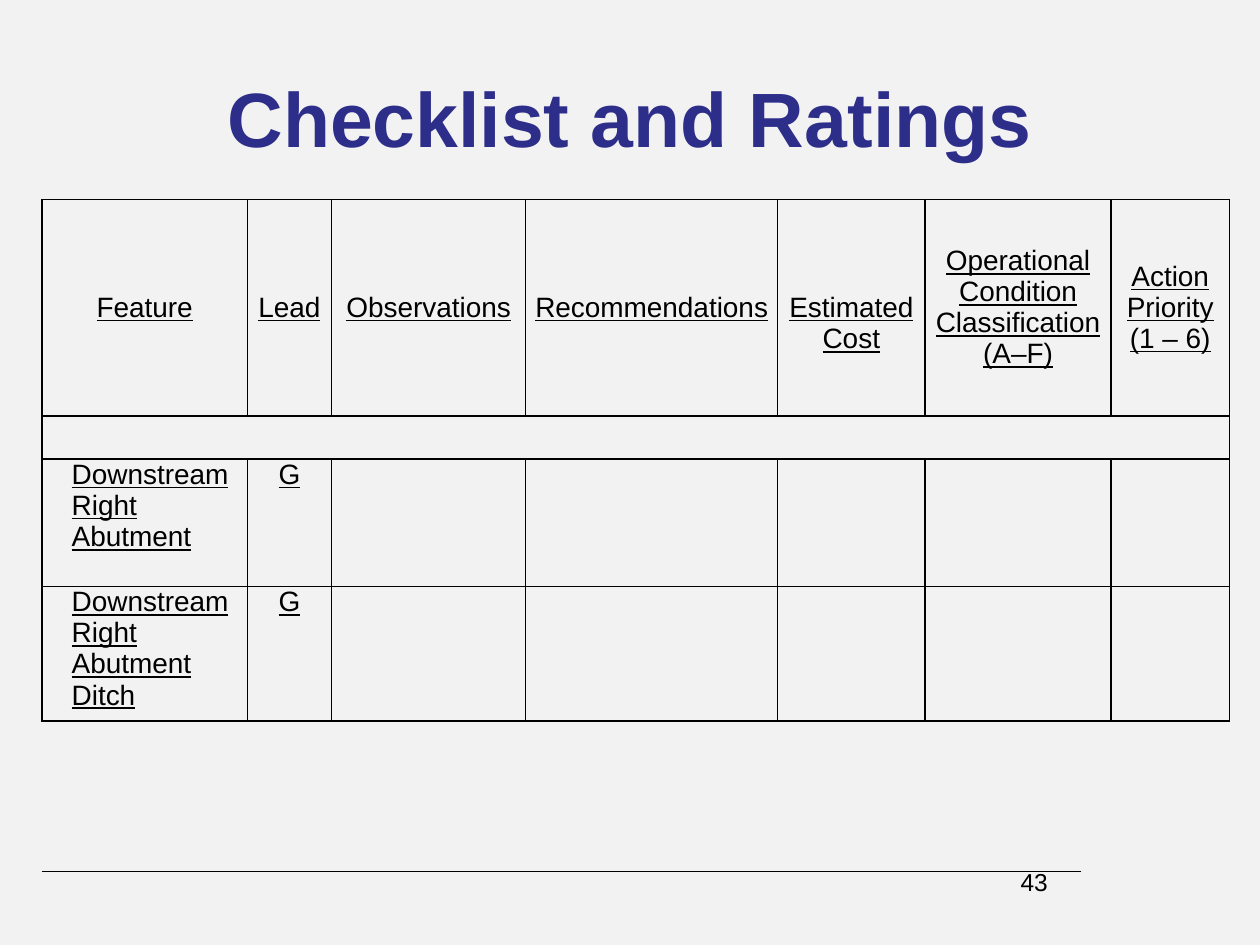
"""Build the "Checklist and Ratings" slide with its inspection table."""
from lxml import etree
from pptx import Presentation
from pptx import util as u
from pptx.dml.color import RGBColor
from pptx.enum import shapes, text
from pptx.oxml import ns

COLORS = {"background": "F2F2F2", "title": "2D2D8A", "ink": "000000"}
CENTER, LEFT = text.PP_ALIGN.CENTER, text.PP_ALIGN.LEFT
TOP, MIDDLE = text.MSO_ANCHOR.TOP, text.MSO_ANCHOR.MIDDLE


def write(frame, content, size=16, color="ink", bold=False, underline=False, align=CENTER, indent=0):
    frame.word_wrap = True
    frame.text = content
    for paragraph in frame.paragraphs:
        paragraph.alignment = align
        if indent:
            paragraph._p.get_or_add_pPr().set("marL", str(u.Pt(indent)))
        for run in paragraph.runs:
            run.font.name = "Arial"
            run.font.size = u.Pt(size)
            run.font.bold = bold
            run.font.underline = underline
            run.font.color.rgb = RGBColor.from_string(COLORS[color])


def add_borders(cell):
    properties = cell._tc.get_or_add_tcPr()
    for side in ("lnL", "lnR", "lnT", "lnB"):
        line = etree.SubElement(properties, ns.qn(f"a:{side}"), w=str(u.Pt(1)))
        fill = etree.SubElement(line, ns.qn("a:solidFill"))
        etree.SubElement(fill, ns.qn("a:srgbClr"), val=COLORS["ink"])


presentation = Presentation()
presentation.slide_width, presentation.slide_height = u.Pt(720), u.Pt(540)
slide = presentation.slides.add_slide(presentation.slide_layouts[5])
slide.background.fill.solid()
slide.background.fill.fore_color.rgb = RGBColor.from_string(COLORS["background"])

footer_line = slide.shapes.add_connector(
    shapes.MSO_CONNECTOR.STRAIGHT, u.Pt(618), u.Pt(498), u.Pt(24), u.Pt(498))
footer_line.line.color.rgb = RGBColor.from_string(COLORS["ink"])
footer_line.line.width = u.Pt(0.75)
etree.SubElement(footer_line._element.spPr, ns.qn("a:effectLst"))

page_number = slide.shapes.add_textbox(u.Pt(516), u.Pt(492), u.Pt(150), u.Pt(36))
write(page_number.text_frame, "43", size=14)

title = slide.shapes.title
title.left, title.top, title.width, title.height = u.Pt(36), u.Pt(21.6), u.Pt(648), u.Pt(90)
write(title.text_frame, "Checklist and Ratings", size=44, color="title", bold=True)
title.text_frame.vertical_anchor = MIDDLE

HEADERS = ["Feature", "Lead", "Observations", "Recommendations", "Estimated\nCost",
           "Operational Condition Classification\n(A–F)", "Action Priority\n(1 – 6)"]
FEATURES = ["Downstream Right Abutment", "Downstream Right Abutment Ditch"]
BLANKS = [""] * 5
ROWS = [HEADERS, [""] * 7] + [[feature, "G"] + BLANKS for feature in FEATURES]
COLUMN_WIDTHS = [117.3, 48.2, 110.9, 144, 84.2, 106.4, 67.5]
ROW_HEIGHTS = [123.6, 24.8, 72.8, 71.4]

table = slide.shapes.add_table(
    len(ROWS), len(HEADERS), u.Pt(24), u.Pt(114),
    u.Pt(sum(COLUMN_WIDTHS)), u.Pt(sum(ROW_HEIGHTS))).table
table.first_row = table.horz_banding = False
for column, width in zip(table.columns, COLUMN_WIDTHS):
    column.width = u.Pt(width)
for row, height in zip(table.rows, ROW_HEIGHTS):
    row.height = u.Pt(height)

for row_index, values in enumerate(ROWS):
    is_header = row_index == 0
    for column_index, value in enumerate(values):
        cell = table.cell(row_index, column_index)
        is_feature = column_index == 0 and not is_header
        write(cell.text_frame, value, underline=True,
              align=LEFT if is_feature else CENTER, indent=12 if is_feature else 0)
        cell.vertical_anchor = MIDDLE if is_header else TOP
        cell.margin_left = cell.margin_right = u.Pt(4.3 if is_header else 5)
        cell.margin_top = u.Pt(18 if value.startswith("Estimated") else 0)
        cell.margin_bottom = u.Pt(0)
        add_borders(cell)
        cell.fill.background()
table.cell(1, 0).merge(table.cell(1, len(HEADERS) - 1))

presentation.save("out.pptx")
